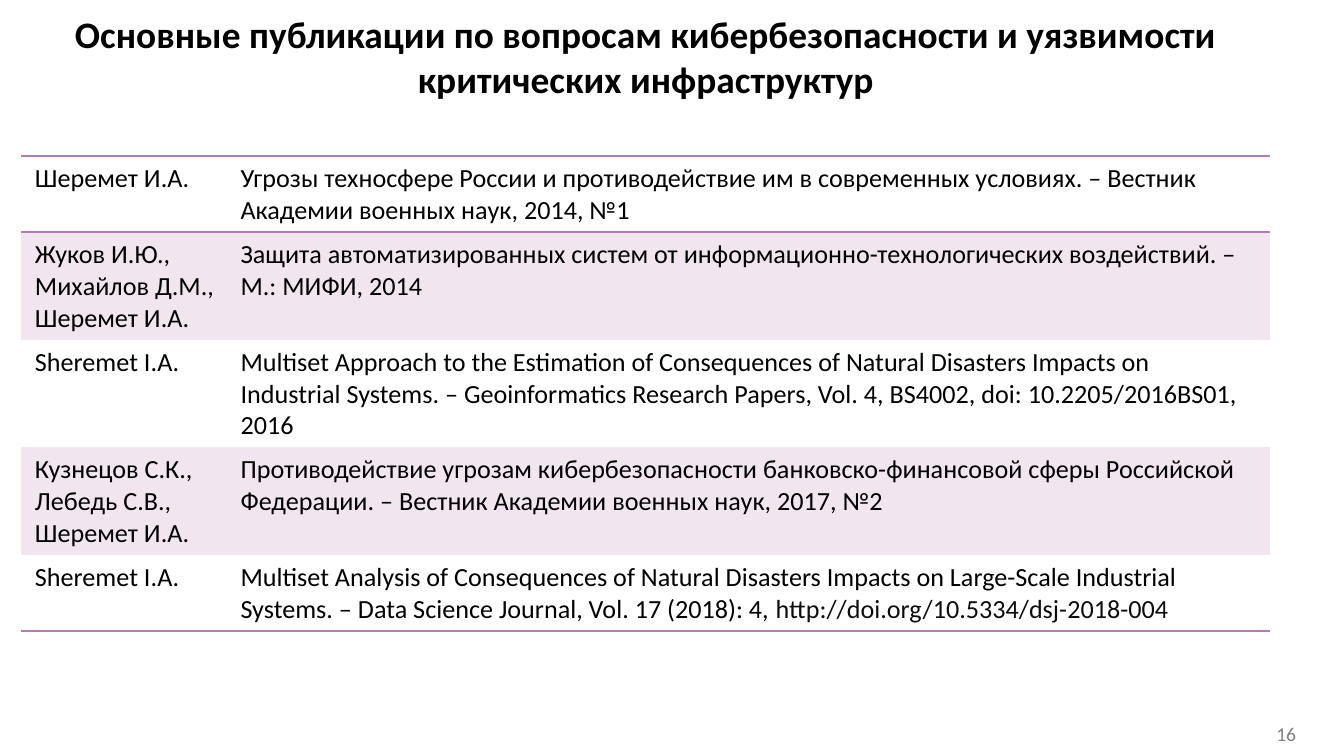
from pptx import Presentation
from pptx.dml.color import RGBColor
from pptx.enum.text import MSO_ANCHOR, PP_ALIGN
from pptx.oxml.ns import qn
from pptx.util import Inches, Pt
from lxml import etree

CENTER = PP_ALIGN.CENTER
MIDDLE = MSO_ANCHOR.MIDDLE

FONT = "Calibri"
BLACK = RGBColor(0x00, 0x00, 0x00)
NEAR_BLACK = RGBColor(0x0D, 0x0D, 0x0D)
GRAY = RGBColor(0x80, 0x80, 0x80)
LILAC = RGBColor(0xB7, 0x7B, 0xB4)
PALE_LILAC = RGBColor(0xF1, 0xE5, 0xF0)

TITLE = "Основные публикации по вопросам кибербезопасности и уязвимости критических инфраструктур"
ARTICLE_LINK = "http://doi.org/10.5334/dsj-2018-004"

# Authors, publication, number of text lines in the row
PUBLICATIONS = [
    ("Шеремет И.А.",
     "Угрозы техносфере России и противодействие им в современных условиях. – "
     "Вестник Академии военных наук, 2014, №1", 2),
    ("Жуков И.Ю., Михайлов Д.М., Шеремет И.А.",
     "Защита автоматизированных систем от информационно-технологических воздействий. – "
     "М.: МИФИ, 2014", 3),
    ("Sheremet I.A.",
     "Multiset Approach to the Estimation of Consequences of Natural Disasters Impacts on "
     "Industrial Systems. – Geoinformatics Research Papers, Vol. 4, BS4002, "
     "doi: 10.2205/2016BS01, 2016", 3),
    ("Кузнецов С.К., Лебедь С.В., Шеремет И.А.",
     "Противодействие угрозам кибербезопасности банковско-финансовой сферы Российской "
     "Федерации. – Вестник Академии военных наук, 2017, №2", 3),
    ("Sheremet I.A.",
     "Multiset Analysis of Consequences of Natural Disasters Impacts on Large-Scale Industrial "
     "Systems. – Data Science Journal, Vol. 17 (2018): 4, ", 2),
]


def format_run(run, size, color, bold=False):
    run.font.name = FONT
    run.font.size = Pt(size)
    run.font.bold = bold
    run.font.color.rgb = color


def add_label(slide, box, text, size, color, bold=False, margin=0.05):
    shape = slide.shapes.add_textbox(*(Inches(length) for length in box))
    text_frame = shape.text_frame
    text_frame.word_wrap = True
    text_frame.vertical_anchor = MIDDLE
    text_frame.margin_top = text_frame.margin_bottom = Inches(margin)
    text_frame.text = text
    paragraph = text_frame.paragraphs[0]
    paragraph.alignment = CENTER
    format_run(paragraph.runs[0], size, color, bold)


def set_borders(cell, top, bottom):
    """Rule the chosen horizontal sides and clear the others."""
    properties = cell._tc.get_or_add_tcPr()
    sides = {"a:lnL": False, "a:lnR": False, "a:lnT": top, "a:lnB": bottom}
    for tag, ruled in sides.items():
        line = etree.SubElement(properties, qn(tag), w=str(Pt(1)))
        if ruled:
            fill = etree.SubElement(line, qn("a:solidFill"))
            etree.SubElement(fill, qn("a:srgbClr"), val=str(LILAC))
        else:
            etree.SubElement(line, qn("a:noFill"))


def add_publications(slide, left, top, width):
    author_width = 1.53
    row_heights = [0.1 + 0.23 * lines for _, _, lines in PUBLICATIONS]
    frame = slide.shapes.add_table(
        len(PUBLICATIONS), 2, Inches(left), Inches(top),
        Inches(width), Inches(sum(row_heights)))
    table = frame.table
    table.first_row = False
    table.horz_banding = False
    table.columns[0].width = Inches(author_width)
    table.columns[1].width = Inches(width - author_width)

    last = len(PUBLICATIONS) - 1
    for index, (authors, publication, _) in enumerate(PUBLICATIONS):
        table.rows[index].height = Inches(row_heights[index])
        for cell, text in zip(table.rows[index].cells, (authors, publication)):
            cell.text_frame.text = text
            format_run(cell.text_frame.paragraphs[0].runs[0], 14, BLACK)
            # Rules go around the first row and under the last one
            set_borders(cell, top=index in (0, 1), bottom=index in (0, last))
            if index % 2:
                cell.fill.solid()
                cell.fill.fore_color.rgb = PALE_LILAC
            else:
                cell.fill.background()
        # Narrow margin keeps each author on one line
        table.cell(index, 0).margin_right = Inches(0.05)

    # Link at the end of the last publication
    link = table.cell(last, 1).text_frame.paragraphs[0].add_run()
    link.text = ARTICLE_LINK
    format_run(link, 14, NEAR_BLACK)


def main():
    presentation = Presentation()
    presentation.slide_width = Inches(10)
    presentation.slide_height = Inches(10) * 9 // 16
    slide = presentation.slides.add_slide(presentation.slide_layouts[6])

    # Page number, title, list of publications
    add_label(slide, (9.27, 5.3, 0.6, 0.32), "16", 10.5, GRAY, margin=0.09)
    add_label(slide, (0.04, 0.06, 9.53, 0.72), TITLE, 20, BLACK, bold=True)
    add_publications(slide, 0.16, 1.16, 9.29)

    presentation.save("out.pptx")


if __name__ == "__main__":
    main()
